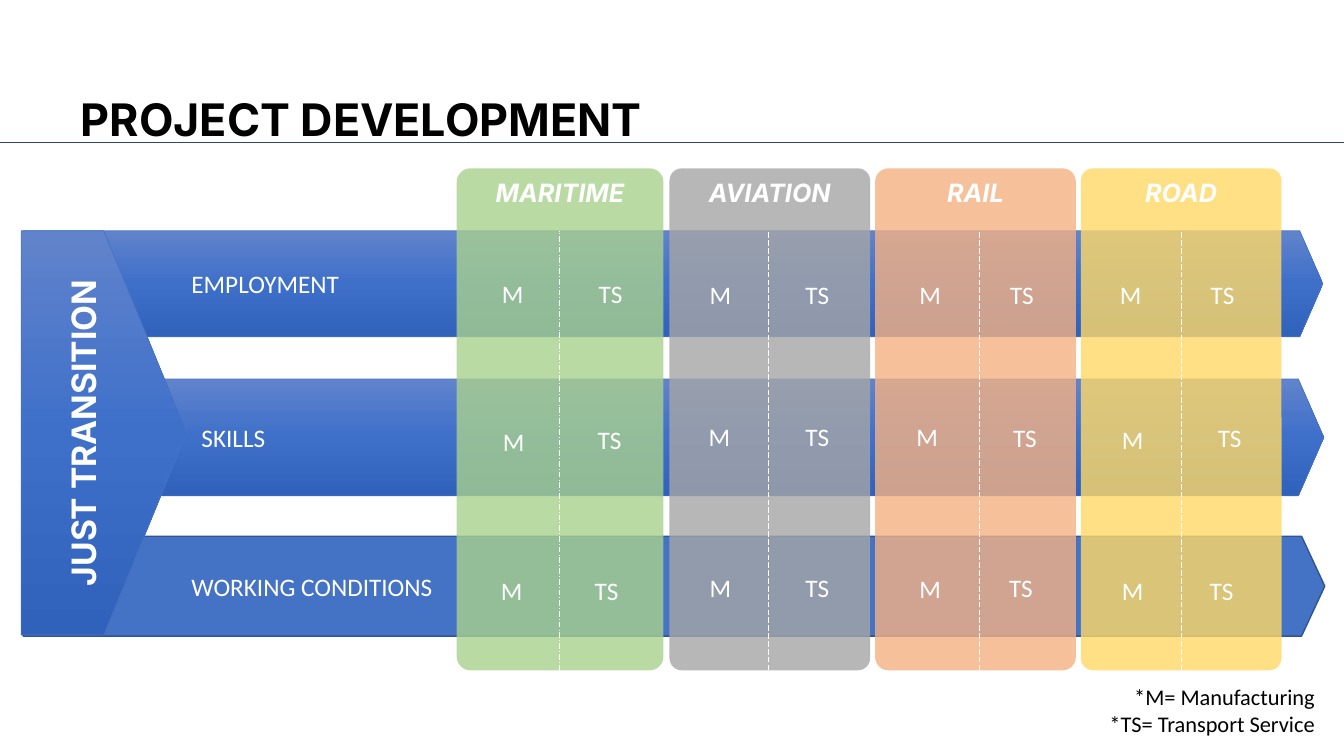
from copy import deepcopy
from dataclasses import dataclass

from pptx import Presentation
from pptx.dml.color import RGBColor
from pptx.enum.dml import MSO_LINE
from pptx.enum.shapes import MSO_CONNECTOR, MSO_SHAPE
from pptx.enum.text import MSO_ANCHOR, MSO_AUTO_SIZE, PP_ALIGN
from pptx.oxml.ns import qn
from pptx.oxml.xmlchemy import OxmlElement
from pptx.util import Inches, Pt

WHITE, BLACK, BLUE = "FFFFFF", "000000", "4472C4"
SHEEN = ((0, "6183CB"), (0.5, "3E70CA"), (1, "3062BB"))
MODE_TOP, MODE_HEIGHT = 1.67, 4.98
DIVIDER_TOP = 2.29
Spot = tuple[float, float]


@dataclass
class Theme:
    label: str
    left: float
    top: float
    width: float
    height: float
    point: float
    indent: float = 1.57
    shiny: bool = True


@dataclass
class Mode:
    label: str
    left: float
    width: float
    rounding: float
    color: str
    divider: float
    manufacturing: tuple[Spot, ...]
    service: tuple[Spot, ...]
    dash: MSO_LINE = MSO_LINE.LONG_DASH


THEMES = [
    Theme("EMPLOYMENT", 0.23, 2.29, 12.89, 1.05, 0.218),
    Theme("SKILLS", 0.22, 3.76, 12.91, 1.16, 0.218, indent=1.68),
    Theme("WORKING CONDITIONS", 0.23, 5.32, 12.91, 0.99, 0.233, shiny=False),
]
MODES = [
    Mode("MARITIME", 4.53, 2.05, 0.066, "A9D18E", 5.55,
         ((4.88, 2.71), (4.89, 4.18), (4.87, 5.66)),
         ((5.84, 2.71), (5.83, 4.16), (5.8, 5.66)), MSO_LINE.LONG_DASH_DOT),
    Mode("AVIATION", 6.64, 1.99, 0.061, "A6A6A6", 7.62,
         ((6.94, 2.72), (6.93, 4.13), (6.94, 5.63)),
         ((7.89, 2.72), (7.89, 4.13), (7.89, 5.63))),
    Mode("RAIL", 8.68, 1.99, 0.066, "F4B183", 9.71,
         ((9.02, 2.72), (8.99, 4.13), (9.02, 5.64)),
         ((9.92, 2.72), (9.95, 4.14), (9.91, 5.63))),
    Mode("ROAD", 10.72, 1.99, 0.061, "FFD966", 11.72,
         ((11.01, 2.72), (11.03, 4.16), (11.03, 5.66)),
         ((11.91, 2.72), (11.98, 4.14), (11.9, 5.66))),
]


def rgb(color: str) -> RGBColor:
    return RGBColor.from_string(color)


def write(shape, text: str, *, size: float = 18, font: str = "Calibri", color: str = WHITE,
          bold: bool = False, italic: bool = False, align=PP_ALIGN.LEFT,
          anchor=MSO_ANCHOR.TOP, indent: float = 0, spacing: float = 1) -> None:
    frame = shape.text_frame
    frame.word_wrap = True
    frame.auto_size = MSO_AUTO_SIZE.NONE
    frame.vertical_anchor = anchor
    frame.text = text
    for paragraph in frame.paragraphs:
        paragraph.alignment = align
        paragraph.line_spacing = spacing
        if indent:
            paragraph._p.get_or_add_pPr().set("marL", str(Inches(indent)))
        for run in paragraph.runs:
            run.font.name = font
            run.font.size = Pt(size)
            run.font.bold = bold
            run.font.italic = italic
            run.font.color.rgb = rgb(color)


def add_label(slide, text: str, left: float, top: float, width: float,
              height: float = 0.4, **style) -> None:
    box = slide.shapes.add_textbox(Inches(left), Inches(top), Inches(width), Inches(height))
    write(box, text, **style)


def add_block(slide, preset, left: float, top: float, width: float, height: float,
              adjustment: float):
    block = slide.shapes.add_shape(preset, Inches(left), Inches(top),
                                   Inches(width), Inches(height))
    block.adjustments[0] = adjustment
    block.shadow.inherit = False
    return block


def paint_sheen(shape) -> None:
    """Fill with the three-stop vertical blue gradient and its thin outline."""
    shape.fill.gradient()
    shape.fill.gradient_angle = 270
    stop_list = shape._element.spPr.find(".//" + qn("a:gsLst"))
    stop_list.append(deepcopy(stop_list[0]))
    for stop, (position, color) in zip(shape.fill.gradient_stops, SHEEN):
        stop.position = position
        stop.color.rgb = rgb(color)
    outline(shape.line, BLUE, 0.5)


def paint_translucent(shape, color: str, opacity: int) -> None:
    shape.fill.solid()
    shape.fill.fore_color.rgb = rgb(color)
    alpha = OxmlElement("a:alpha")
    alpha.set("val", str(opacity * 1000))
    shape._element.spPr.find(".//" + qn("a:srgbClr")).append(alpha)
    shape.line.fill.background()


def outline(line, color: str, width: float) -> None:
    line.color.rgb = rgb(color)
    line.width = Pt(width)


def add_line(slide, x1: float, y1: float, x2: float, y2: float, color: str,
             width: float, dash=None) -> None:
    connector = slide.shapes.add_connector(MSO_CONNECTOR.STRAIGHT, Inches(x1), Inches(y1),
                                           Inches(x2), Inches(y2))
    outline(connector.line, color, width)
    if dash:
        connector.line.dash_style = dash
    connector._element.spPr.append(OxmlElement("a:effectLst"))


def add_theme(slide, theme: Theme) -> None:
    arrow = add_block(slide, MSO_SHAPE.PENTAGON, theme.left, theme.top,
                      theme.width, theme.height, theme.point)
    if theme.shiny:
        paint_sheen(arrow)
    else:
        arrow.fill.solid()
        arrow.fill.fore_color.rgb = rgb(BLUE)
        outline(arrow.line, "325491", 1)
    write(arrow, theme.label, anchor=MSO_ANCHOR.MIDDLE, indent=theme.indent)


def add_mode(slide, mode: Mode) -> None:
    band = add_block(slide, MSO_SHAPE.ROUNDED_RECTANGLE, mode.left, MODE_TOP,
                     mode.width, MODE_HEIGHT, mode.rounding)
    paint_translucent(band, mode.color, 80)
    write(band, mode.label, font="Inter", bold=True, italic=True, align=PP_ALIGN.CENTER)
    add_line(slide, mode.divider, MODE_TOP + MODE_HEIGHT, mode.divider, DIVIDER_TOP,
             WHITE, 0.5, mode.dash)
    for left, top in mode.manufacturing:
        add_label(slide, "M", left, top, 0.54)
    for left, top in mode.service:
        add_label(slide, "TS", left, top, 0.6)


def main() -> None:
    deck = Presentation()
    deck.slide_width, deck.slide_height = Inches(13.33), Inches(7.5)
    slide = deck.slides.add_slide(deck.slide_layouts[5])

    title = slide.shapes.title
    title.left, title.top = Inches(0.7), Inches(0.59)
    title.width, title.height = Inches(9.14), Inches(0.83)
    write(title, "PROJECT DEVELOPMENT", size=32, font="Inter", color=BLACK,
          bold=True, spacing=1.5)
    add_line(slide, 0, 1.41, 13.33, 1.41, "2D4A57", 0.75)

    for theme in THEMES:
        add_theme(slide, theme)

    transition = add_block(slide, MSO_SHAPE.PENTAGON, 0.21, 2.29, 1.64, 4.01, 0.5)
    paint_sheen(transition)
    write(transition, "JUST TRANSITION", size=24, font="Inter", bold=True,
          align=PP_ALIGN.CENTER, anchor=MSO_ANCHOR.MIDDLE)
    transition.text_frame._txBody.bodyPr.set("vert", "vert270")

    for mode in MODES:
        add_mode(slide, mode)

    add_label(slide, "*M= Manufacturing\n*TS= Transport Service", 8.83, 6.73, 4.31, 0.64,
              size=16, color=BLACK, align=PP_ALIGN.RIGHT)
    deck.save("out.pptx")


if __name__ == "__main__":
    main()
